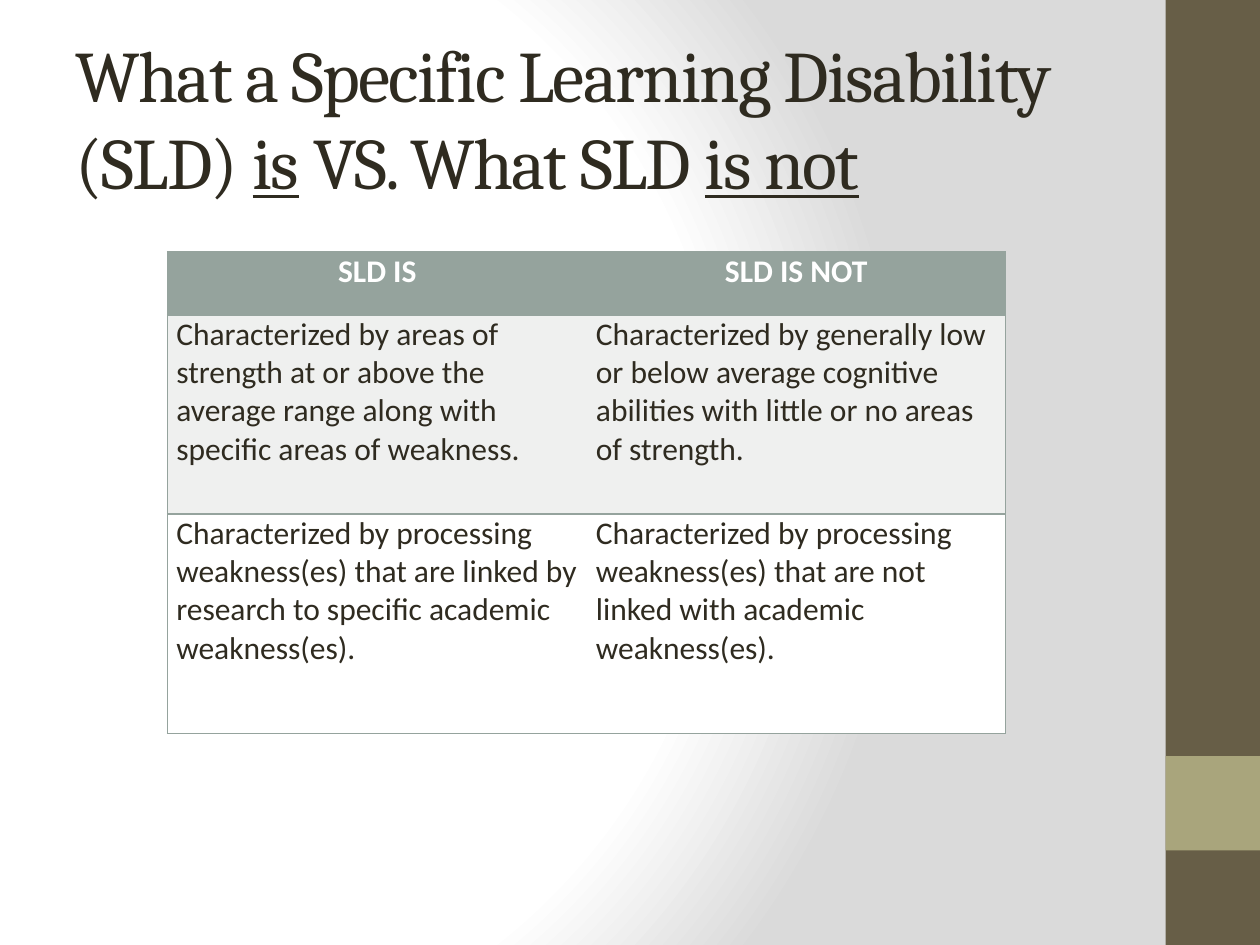
from typing import NamedTuple

from lxml import etree
from pptx import Presentation
from pptx.dml.color import RGBColor
from pptx.enum.shapes import MSO_SHAPE
from pptx.enum.text import MSO_ANCHOR, MSO_AUTO_SIZE, PP_ALIGN
from pptx.oxml import parse_xml
from pptx.oxml.ns import nsdecls, qn
from pptx.util import Inches, Pt

RECT = MSO_SHAPE.RECTANGLE
MIDDLE, TOP = MSO_ANCHOR.MIDDLE, MSO_ANCHOR.TOP
LEFT, CENTER = PP_ALIGN.LEFT, PP_ALIGN.CENTER
NO_FIT = MSO_AUTO_SIZE.NONE

INK = RGBColor(0x2F, 0x2B, 0x20)
WHITE = RGBColor(0xFF, 0xFF, 0xFF)
SAGE = RGBColor(0x95, 0xA3, 0x9D)
PALE_SAGE = RGBColor(0xEF, 0xF0, 0xEF)
BROWN = RGBColor(0x67, 0x5E, 0x47)
OLIVE = RGBColor(0xA9, 0xA5, 0x7C)
GREY = RGBColor(0xDA, 0xDA, 0xDA)

WIDTH, HEIGHT = Inches(10), Inches(7.5)


class Bar(NamedTuple):
    top: float
    height: float
    color: RGBColor


class Row(NamedTuple):
    height: float
    fill: RGBColor
    color: RGBColor
    header: bool
    texts: tuple[str, str]


BAR_LEFT = 0.925
BARS = [Bar(0, 1, BROWN), Bar(0.8, 0.1, OLIVE)]
BACKGROUND_STOPS = [(0, WHITE), (75, WHITE), (100, GREY)]
TITLE = [
    ("What a Specific Learning Disability (SLD) ", False),
    ("is", True),
    (" VS. What SLD ", False),
    ("is not", True),
]
COLUMNS = [3.33, 3.32]
ROWS = [
    Row(0.5, SAGE, WHITE, True, ("SLD IS", "SLD IS NOT")),
    Row(1.58, PALE_SAGE, INK, False, (
        "Characterized by areas of strength at or above the average range "
        "along with specific areas of weakness.",
        "Characterized by generally low or below average cognitive abilities "
        "with little or no areas of strength.")),
    Row(1.74, WHITE, INK, False, (
        "Characterized by processing weakness(es) that are linked by research "
        "to specific academic weakness(es).",
        "Characterized by processing weakness(es) that are not linked with "
        "academic weakness(es).")),
]


def set_background(s) -> None:
    stops = "".join(
        f'<a:gs pos="{pos * 1000}"><a:srgbClr val="{color}"/></a:gs>'
        for pos, color in BACKGROUND_STOPS)
    s.element.cSld.insert(0, parse_xml(
        f'<p:bg {nsdecls("p", "a")}><p:bgPr><a:gradFill rotWithShape="1">'
        f'<a:gsLst>{stops}</a:gsLst><a:path path="circle">'
        '<a:fillToRect l="20000" t="50000" r="100000" b="50000"/></a:path>'
        '</a:gradFill><a:effectLst/></p:bgPr></p:bg>'))


def add_bar(s, bar: Bar) -> None:
    sp = s.shapes.add_shape(
        RECT, int(BAR_LEFT * WIDTH), int(bar.top * HEIGHT),
        int((1 - BAR_LEFT) * WIDTH), int(bar.height * HEIGHT))
    sp.shadow.inherit = False
    sp.fill.solid()
    sp.fill.fore_color.rgb = bar.color
    sp.line.fill.background()


def add_run(p, text: str, font: str, size: float, color: RGBColor):
    r = p.add_run()
    r.text = text
    r.font.name, r.font.size = font, Pt(size)
    r.font.color.rgb = color
    return r


def set_title(s) -> None:
    sp = s.shapes.title
    sp.left, sp.top = int(0.05 * WIDTH), int(0.04 * HEIGHT)
    sp.width, sp.height = Inches(8.33), Inches(1.25)
    tf = sp.text_frame
    tf.word_wrap, tf.auto_size = True, NO_FIT
    tf.vertical_anchor = MIDDLE
    p = tf.paragraphs[0]
    p.alignment = LEFT
    for text, underlined in TITLE:
        r = add_run(p, text, "Cambria", 41.4, INK)
        r.font.underline = underlined
        r.font._element.set("spc", "-100")


def set_border(cell, side: str, visible: bool) -> None:
    ln = etree.SubElement(
        cell._tc.get_or_add_tcPr(), qn(f"a:ln{side}"), w=str(Pt(1)))
    if visible:
        fill = etree.SubElement(ln, qn("a:solidFill"))
        etree.SubElement(fill, qn("a:srgbClr"), val=str(SAGE))
    else:
        etree.SubElement(ln, qn("a:noFill"))


def fill_cell(cell, row: Row, col: int) -> None:
    borders = {"L": col == 0, "R": col == 1, "T": True, "B": True}
    for side, visible in borders.items():
        set_border(cell, side, visible)
    cell.fill.solid()
    cell.fill.fore_color.rgb = row.fill
    cell.margin_left = cell.margin_right = Inches(0.07)
    cell.margin_top = cell.margin_bottom = 0
    cell.vertical_anchor = TOP
    p = cell.text_frame.paragraphs[0]
    p.alignment = CENTER if row.header else LEFT
    r = add_run(p, row.texts[col], "Calibri", 18, row.color)
    r.font.bold = row.header


def add_comparison(s) -> None:
    table = s.shapes.add_table(
        len(ROWS), len(COLUMNS), Inches(1.33), Inches(2),
        Inches(sum(COLUMNS)), Inches(sum(row.height for row in ROWS))).table
    table.horz_banding = False
    for column, width in zip(table.columns, COLUMNS):
        column.width = Inches(width)
    for i, row in enumerate(ROWS):
        table.rows[i].height = Inches(row.height)
        for col in range(len(COLUMNS)):
            fill_cell(table.cell(i, col), row, col)


def main() -> None:
    prs = Presentation()
    prs.slide_width, prs.slide_height = WIDTH, HEIGHT
    s = prs.slides.add_slide(prs.slide_layouts[5])
    set_background(s)
    for bar in BARS:
        add_bar(s, bar)
    set_title(s)
    add_comparison(s)
    prs.save("out.pptx")


if __name__ == "__main__":
    main()
